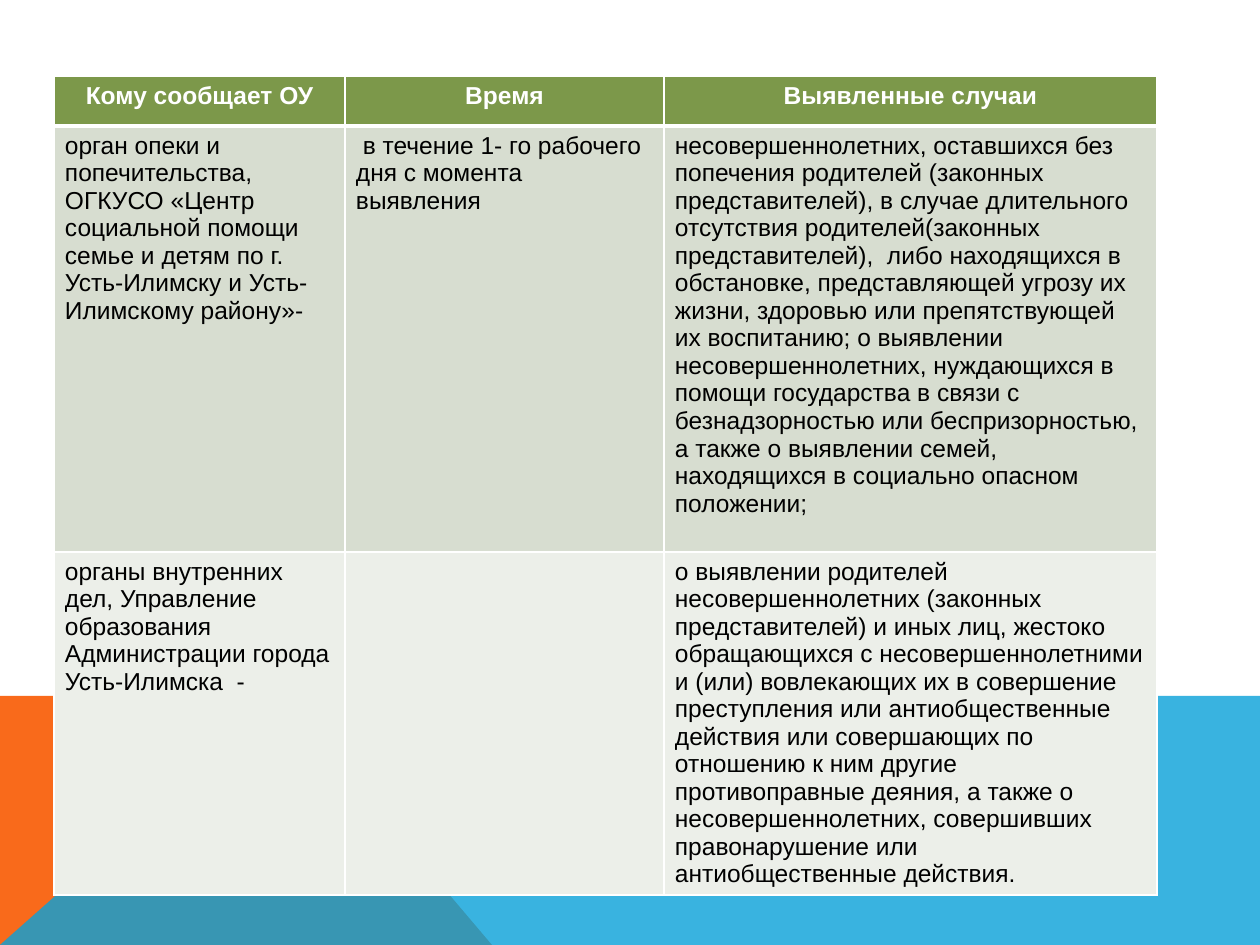
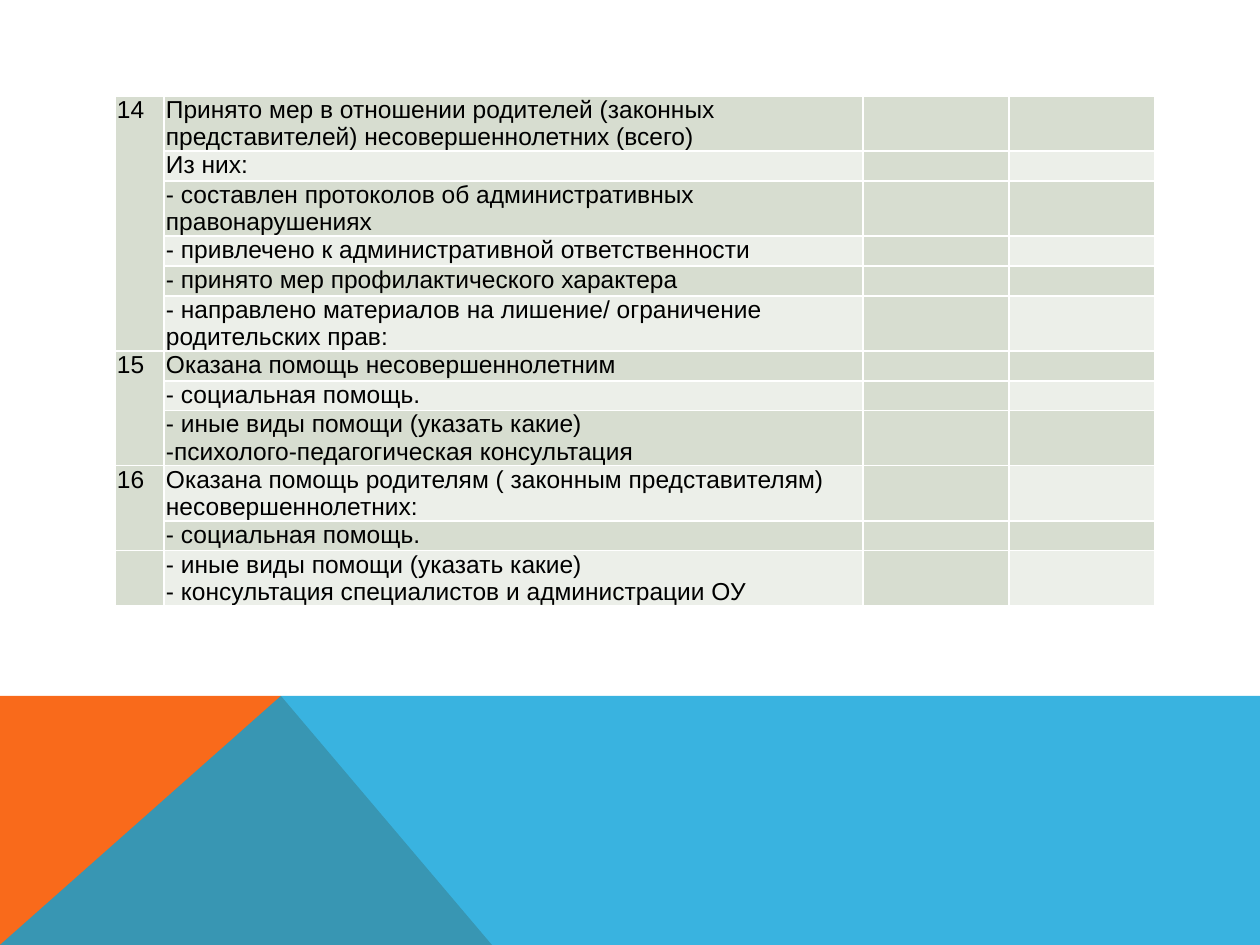
from dataclasses import dataclass

from lxml import etree
from pptx import Presentation
from pptx.dml.color import RGBColor
from pptx.enum import text
from pptx.oxml.ns import qn
from pptx.util import Pt

SCALE = 914400 / 126  # EMU per px
WIDTH, HEIGHT = 1260, 945


@dataclass(frozen=True)
class Theme:
    font: str = "Arial"
    size: int = 14
    ink: str = "000000"
    white: str = "FFFFFF"
    header: str = "7C984A"
    dark: str = "D7DDD0"
    light: str = "ECEFE9"
    orange: str = "F96A1B"
    blue: str = "08A1D9"
    thin: int = 1
    thick: int = 3


def px(n):
    return round(n * SCALE)


def write(tf, content, *, theme, color, bold=False, align=None):
    """Fill a text frame, one paragraph per line of content."""
    for i, line in enumerate(content.split("\n")):
        p = tf.paragraphs[0] if i == 0 else tf.add_paragraph()
        p.alignment = align
        if line:
            r = p.add_run()
            r.text = line
            r.font.name, r.font.size, r.font.bold = theme.font, Pt(theme.size), bold
            r.font.color.rgb = RGBColor.from_string(color)
        else:  # an empty cell must not be taller than a line of text
            etree.SubElement(p._p, qn("a:endParaRPr"), sz=str(theme.size * 100))


class Deck:
    def __init__(self, theme):
        self.theme = theme
        self.prs = Presentation()
        self.prs.slide_width, self.prs.slide_height = px(WIDTH), px(HEIGHT)
        self.s = None

    def slide(self):
        self.s = self.prs.slides.add_slide(self.prs.slide_layouts[6])
        top, peak = 696, 281
        self.polygon([(0, HEIGHT), (0, top), (peak, top), (492, HEIGHT)], self.theme.orange)
        self.polygon([(0, HEIGHT), (peak, top), (WIDTH, top), (WIDTH, HEIGHT)],
                     self.theme.blue, alpha=80)

    def polygon(self, points, color, alpha=100):
        builder = self.s.shapes.build_freeform(*points[0], scale=SCALE)
        builder.add_line_segments(points[1:], close=True)
        sp = builder.convert_to_shape()
        sp.shadow.inherit = False
        sp.line.fill.background()
        sp.fill.solid()
        sp.fill.fore_color.rgb = RGBColor.from_string(color)
        if alpha < 100:
            clr = sp.fill._xPr.find(".//" + qn("a:srgbClr"))
            etree.SubElement(clr, qn("a:alpha"), val=str(alpha * 1000))

    def table(self, left, top, cols, heights, rows, *, margins, header=False, dark_cols=()):
        """Banded table; dark_cols keep the dark band in every row."""
        t = self.theme
        tbl = self.s.shapes.add_table(len(rows), len(cols), px(left), px(top),
                                      px(sum(cols)), px(sum(heights))).table
        tbl.first_row = header
        tbl.horz_banding = False
        for col, w in zip(tbl.columns, cols):
            col.width = px(w)
        for row, h in zip(tbl.rows, heights):
            row.height = px(h)
        for i, row in enumerate(rows):
            is_head = header and i == 0
            for j, content in enumerate(row):
                cell = tbl.cell(i, j)
                cell.margin_left = cell.margin_right = px(margins[0])
                cell.margin_top = cell.margin_bottom = px(margins[1])
                is_dark = j in dark_cols or (i - header) % 2 == 0
                fill = t.header if is_head else t.dark if is_dark else t.light
                cell.fill.solid()
                cell.fill.fore_color.rgb = RGBColor.from_string(fill)
                self.borders(cell, T=t.thick if header and i == 1 else t.thin,
                             B=t.thick if is_head else t.thin)
                write(cell.text_frame, content, theme=t, bold=is_head,
                      color=t.white if is_head else t.ink,
                      align=text.PP_ALIGN.CENTER if is_head else None)
        return tbl

    def borders(self, cell, **widths):
        tc_pr = cell._tc.get_or_add_tcPr()
        for i, side in enumerate("LRTB"):
            w = widths.get(side, self.theme.thin)
            ln = etree.Element(qn("a:ln" + side), w=str(Pt(w)))
            fill = etree.SubElement(ln, qn("a:solidFill"))
            etree.SubElement(fill, qn("a:srgbClr"), val=self.theme.white)
            tc_pr.insert(i, ln)


REPORTS = [
    ("Кому сообщает ОУ", "Время", "Выявленные случаи"),
    ("орган опеки и попечительства, ОГКУСО «Центр социальной помощи семье и детям "
     "по г. Усть-Илимску и Усть-Илимскому району»-",
     " в течение 1- го рабочего дня с момента выявления",
     "несовершеннолетних, оставшихся без попечения родителей (законных представителей), "
     "в случае длительного отсутствия родителей(законных представителей),  либо "
     "находящихся в обстановке, представляющей угрозу их жизни, здоровью или "
     "препятствующей их воспитанию; о выявлении несовершеннолетних, нуждающихся в "
     "помощи государства в связи с безнадзорностью или беспризорностью, а также о "
     "выявлении семей, находящихся в социально опасном положении;"),
    ("органы внутренних дел, Управление образования Администрации города Усть-Илимска  -",
     "",
     "о выявлении родителей несовершеннолетних (законных представителей) и иных лиц, "
     "жестоко обращающихся с несовершеннолетними и (или) вовлекающих их в совершение "
     "преступления или антиобщественные действия или совершающих по отношению к ним "
     "другие противоправные деяния, а также о несовершеннолетних, совершивших "
     "правонарушение или антиобщественные действия."),
]

# number, measures as (wording, lines it takes)
MEASURES = [
    ("14", [("Принято мер в отношении родителей (законных представителей) "
             "несовершеннолетних (всего)", 2),
            ("Из них:", 1),
            ("- составлен протоколов об административных правонарушениях", 2),
            ("- привлечено к административной ответственности", 1),
            ("- принято мер профилактического характера", 1),
            ("- направлено материалов на лишение/ ограничение родительских прав:", 2)]),
    ("15", [("Оказана помощь несовершеннолетним", 1),
            ("- социальная помощь.", 1),
            ("- иные виды помощи (указать какие)\n-психолого-педагогическая консультация", 2)]),
    ("16", [("Оказана помощь родителям ( законным представителям) несовершеннолетних:", 2),
            ("- социальная помощь.", 1)]),
    ("", [("- иные виды помощи (указать какие)\n"
           "- консультация специалистов и администрации ОУ", 2)]),
]


def reports_slide(deck):
    deck.slide()
    deck.table(54, 76, [291, 319, 493], [50, 426, 343], REPORTS,
               margins=(11, 6), header=True)


def measures_slide(deck):
    deck.slide()
    line_height = 27
    rows, heights, spans = [], [], []
    for number, measures in MEASURES:
        spans.append((len(rows), len(rows) + len(measures) - 1))
        for k, (wording, lines) in enumerate(measures):
            rows.append((number if k == 0 else "", wording, "", ""))
            heights.append(lines * line_height)
    tbl = deck.table(115, 96, [49, 699, 146, 146], heights, rows,
                     margins=(2, 0), dark_cols=(0, 2))
    for first, last in spans:
        if last > first:
            tbl.cell(first, 0).merge(tbl.cell(last, 0))


def main():
    deck = Deck(Theme())
    reports_slide(deck)
    measures_slide(deck)
    deck.prs.save("out.pptx")


if __name__ == "__main__":
    main()
